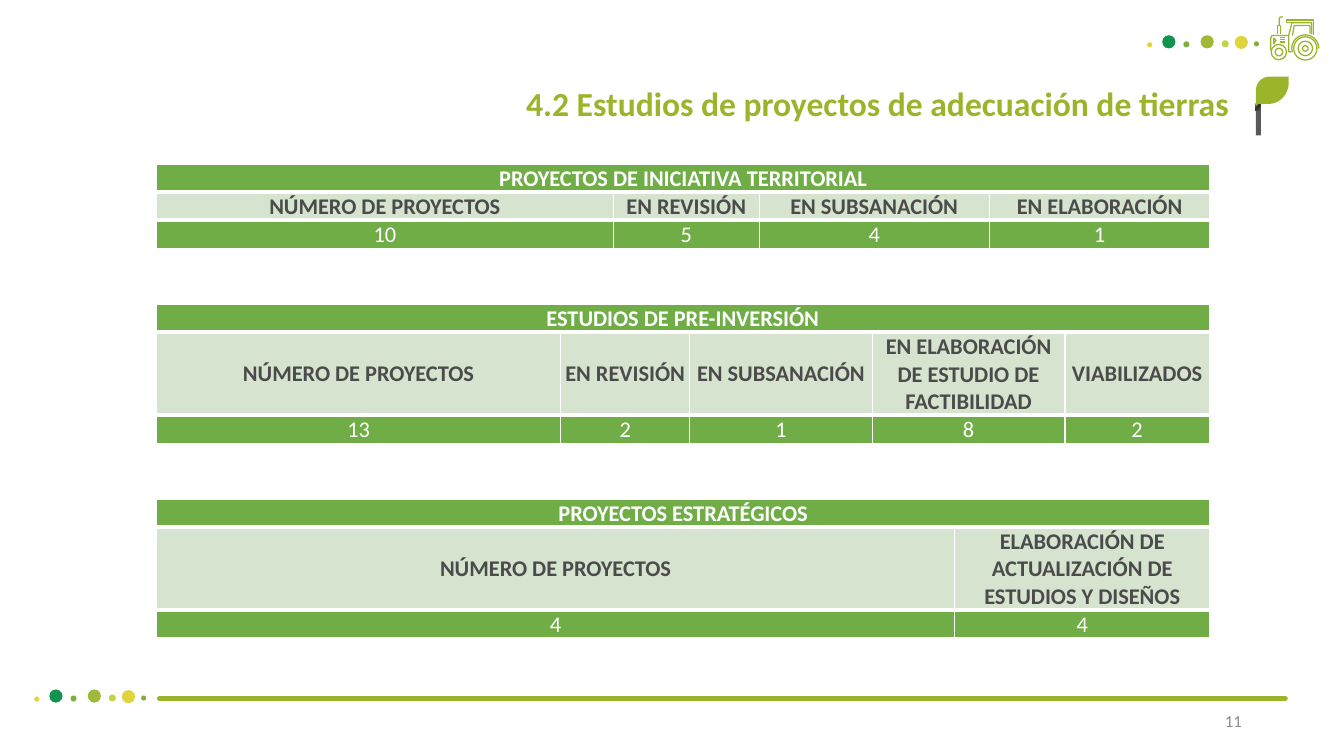
from itertools import accumulate
from math import cos, radians, sin

from lxml.etree import SubElement
from pptx import Presentation
from pptx.dml.color import RGBColor
from pptx.enum.shapes import MSO_CONNECTOR, MSO_SHAPE
from pptx.enum.text import MSO_ANCHOR, MSO_AUTO_SIZE, PP_ALIGN
from pptx.oxml.ns import qn
from pptx.util import Pt

COLORS = {
    "lime": "9AB52A", "emerald": "139350", "leaf": "7EAE40", "olive": "A0B939",
    "pale lime": "C1D245", "yellow": "E0D43D", "table": "70AD47", "header": "D5E3CF",
    "text": "4B4B4B", "number": "8C8C8C", "stem": "595959", "black": "0D0D0D", "white": "FFFFFF",
}
DOTS = [
    (10.8, 0, 9.4, "emerald"), (25.9, 4.3, 4.3, "leaf"), (38.2, 0, 9.4, "olive"),
    (53.3, 3.6, 5, "pale lime"), (62.6, 0.4, 9.4, "yellow"), (76.3, 4.3, 3.6, "leaf"),
    (0, 5, 3.6, "yellow"),
]
WHEELS = [(932.4, 34.6, (8.3, 5.2, 2)), (913.5, 37.2, (5.5, 2.7))]
TRACTOR_LINES = [
    [(907.6, 36), (907.6, 27.4), (908.6, 25.4), (920.5, 25.4), (920.5, 37), (923, 37)],
    [(920.5, 25.4), (922.9, 16.2), (937, 16.2), (937, 24.6)],
    [(923.2, 25.4), (924.4, 18.3), (935.7, 18.3), (935.7, 24)],
    [(922.9, 16.2), (919.2, 16.2), (919.2, 14.2), (938, 14.2), (938, 25)],
    [(912.6, 24.6), (912.6, 18.3), (914.9, 18.3), (914.9, 24.6)],
    [(913.7, 17.8), (913.7, 13.5), (914.4, 12.2), (916.4, 12.2)],
    [(909.8, 27.2), (911.5, 28.8), (909.8, 31.2), (909.8, 27.2)],
]
TABLES = [
    (117.4, (326.2, 104.4, 164.2, 157.7), 20, "PROYECTOS DE INICIATIVA TERRITORIAL",
     ("NÚMERO DE PROYECTOS", "EN REVISIÓN", "EN SUBSANACIÓN", "EN ELABORACIÓN"),
     ("10", "5", "4", "1")),
    (217.4, (288.7, 92.2, 130.3, 137.8, 103), 59.3, "ESTUDIOS DE PRE-INVERSIÓN",
     ("NÚMERO DE PROYECTOS", "EN REVISIÓN", "EN SUBSANACIÓN",
      "EN ELABORACIÓN DE ESTUDIO DE FACTIBILIDAD", "VIABILIZADOS"),
     ("13", "2", "1", "8", "2")),
    (356.4, (570.2, 182.2), 59.3, "PROYECTOS ESTRATÉGICOS",
     ("NÚMERO DE PROYECTOS", "ELABORACIÓN DE ACTUALIZACIÓN DE ESTUDIOS Y DISEÑOS"),
     ("4", "4")),
]


def color(name):
    """Return the named colour."""
    return RGBColor.from_string(COLORS[name])


def bezier(start, first, second, end, steps=12):
    """Return points along a cubic curve, without its start."""
    return [
        tuple((1 - t) ** 3 * a + 3 * t * (1 - t) ** 2 * b + 3 * t * t * (1 - t) * c + t ** 3 * d
              for a, b, c, d in zip(start, first, second, end))
        for t in (step / steps for step in range(1, steps + 1))
    ]


class SlidePainter:
    """Draw elements on one slide in a shared style."""

    font = "Calibri"

    def __init__(self, page):
        """Keep the slide to draw on."""
        self.page = page

    def paint(self, shape, fill=None, line=None):
        """Set the fill and outline of a shape."""
        shape.shadow.inherit = False
        if fill:
            shape.fill.solid()
            shape.fill.fore_color.rgb = color(fill)
        else:
            shape.fill.background()
        if line:
            shape.line.color.rgb = color(line)
            shape.line.width = Pt(0.9)
        else:
            shape.line.fill.background()
        return shape

    def shape(self, kind, left, top, width, height, fill=None, line=None):
        """Add a preset shape."""
        shape = self.page.shapes.add_shape(kind, Pt(left), Pt(top), Pt(width), Pt(height))
        return self.paint(shape, fill, line)

    def outline(self, points, fill=None, line=None):
        """Add a freeform through the points, closed when filled."""
        corners = [(Pt(x), Pt(y)) for x, y in points]
        builder = self.page.shapes.build_freeform(*corners[0])
        builder.add_line_segments(corners[1:], close=bool(fill))
        return self.paint(builder.convert_to_shape(), fill, line)

    def rule(self, left, right, y):
        """Add a horizontal line with round ends."""
        rule = self.page.shapes.add_connector(MSO_CONNECTOR.STRAIGHT, Pt(left), Pt(y), Pt(right), Pt(y))
        rule.line.color.rgb = color("lime")
        rule.line.width = Pt(3.75)
        properties = rule._element.spPr
        properties.find(qn("a:ln")).set("cap", "rnd")
        SubElement(properties, qn("a:effectLst"))

    def set_text(self, frame, text, size, ink, align, bold=False):
        """Put one formatted paragraph into a text frame."""
        frame.word_wrap = True
        para = frame.paragraphs[0]
        para.text = text
        para.alignment = align
        para.font.name = self.font
        para.font.size = Pt(size)
        para.font.bold = bold
        para.font.color.rgb = color(ink)

    def title(self, text, left, top, width, height):
        """Place and fill the title placeholder."""
        title = self.page.shapes.title
        title.left, title.top, title.width, title.height = Pt(left), Pt(top), Pt(width), Pt(height)
        title.text_frame.auto_size = MSO_AUTO_SIZE.NONE
        title.text_frame.vertical_anchor = MSO_ANCHOR.TOP
        self.set_text(title.text_frame, text, 24, "lime", PP_ALIGN.LEFT, True)

    def page_number(self, text, left, top, width, height):
        """Add the slide number."""
        box = self.page.shapes.add_textbox(Pt(left), Pt(top), Pt(width), Pt(height))
        box.text_frame.vertical_anchor = MSO_ANCHOR.MIDDLE
        self.set_text(box.text_frame, text, 12, "number", PP_ALIGN.RIGHT)

    def cell(self, cell, text, fill, ink, bold, top, bottom):
        """Format one table cell and its borders."""
        for side, width in (("L", 1), ("R", 1), ("T", top), ("B", bottom)):
            border = SubElement(cell._tc.get_or_add_tcPr(), qn(f"a:ln{side}"), w=str(Pt(width)))
            SubElement(SubElement(border, qn("a:solidFill")), qn("a:srgbClr"), val=COLORS["white"])
        cell.fill.solid()
        cell.fill.fore_color.rgb = color(fill)
        cell.margin_left = cell.margin_right = cell.margin_top = Pt(0.7)
        cell.margin_bottom = 0
        cell.vertical_anchor = MSO_ANCHOR.MIDDLE
        self.set_text(cell.text_frame, text, 16, ink, PP_ALIGN.CENTER, bold)

    def table(self, top, widths, header_height, heading, labels, values):
        """Add a table with a merged heading, labels and values."""
        heights = (20, header_height, 20)
        table = self.page.shapes.add_table(
            3, len(widths), Pt(111.8), Pt(top), Pt(sum(widths)), Pt(sum(heights))).table
        table.first_row = table.horz_banding = False
        for column, width in zip(table.columns, widths):
            column.width = Pt(width)
        for row, height in zip(table.rows, heights):
            row.height = Pt(height)
        headings = (heading,) + ("",) * (len(widths) - 1)
        styles = [
            (headings, "table", "white", True, 1, 3),
            (labels, "header", "text", True, 3, 3),
            (values, "table", "white", False, 3, 1),
        ]
        for row, (texts, *style) in zip(table.rows, styles):
            for cell, text in zip(row.cells, texts):
                self.cell(cell, text, *style)
        table.cell(0, 0).merge(table.cell(0, len(widths) - 1))

    def dots(self, left, top):
        """Add the row of coloured dots."""
        for dx, dy, size, fill in DOTS:
            self.shape(MSO_SHAPE.OVAL, left + dx, top + dy, size, size, fill)

    def tractor(self):
        """Draw the tractor icon."""
        for x, y, radii in WHEELS:
            for radius in radii:
                self.shape(MSO_SHAPE.OVAL, x - radius, y - radius, 2 * radius, 2 * radius, line="lime")
        x, y, _ = WHEELS[0]
        fender = [(x + 9.7 * cos(radians(a)), y + 9.7 * sin(radians(a))) for a in range(165, 361, 15)]
        vents = [[(914.6, height), (917.8, height)] for height in accumulate((27, 1.5, 1.5))]
        for points in [fender] + TRACTOR_LINES + vents:
            self.outline(points, line="lime")

    def plant(self):
        """Draw the leaf on its stem."""
        stem = self.shape(MSO_SHAPE.ROUND_1_RECTANGLE, 897.1, 73.4, 3.6, 23.3, "stem")
        stem._element.spPr.get_or_add_xfrm().set("flipH", "1")
        shade = self.shape(MSO_SHAPE.RECTANGLE, 897.1, 73.4, 3.6, 5.8)
        shade.fill.gradient()
        shade.fill.gradient_angle = 315
        for stop, name in zip(shade.fill.gradient_stops, ("black", "stem")):
            stop.color.rgb = color(name)
        leaf = [(920.5, 54.7), (907.2, 54.7)]
        leaf += bezier(leaf[-1], (901.4, 54.7), (897.1, 59), (897.1, 64.8)) + [(897.1, 77)]
        leaf += bezier(leaf[-1], (897.1, 75.6), (898.6, 74.2), (900, 74.2)) + [(906.5, 74.2)]
        leaf += bezier(leaf[-1], (913.7, 74.2), (920.5, 67.7), (920.5, 59))
        self.outline(leaf, "lime")


def main():
    """Build and save the slide."""
    deck = Presentation()
    deck.slide_width, deck.slide_height = Pt(960), Pt(540)
    painter = SlidePainter(deck.slides.add_slide(deck.slide_layouts[5]))
    painter.dots(819.4, 25.2)
    painter.tractor()
    painter.dots(24.5, 492.5)
    painter.rule(114, 918, 499)
    painter.page_number("11", 678.2, 500.4, 216, 28.8)
    for table in TABLES:
        painter.table(*table)
    painter.title("4.2 Estudios de proyectos de adecuación de tierras", 368.6, 55.4, 525, 36)
    painter.plant()
    deck.save("out.pptx")


if __name__ == "__main__":
    main()
